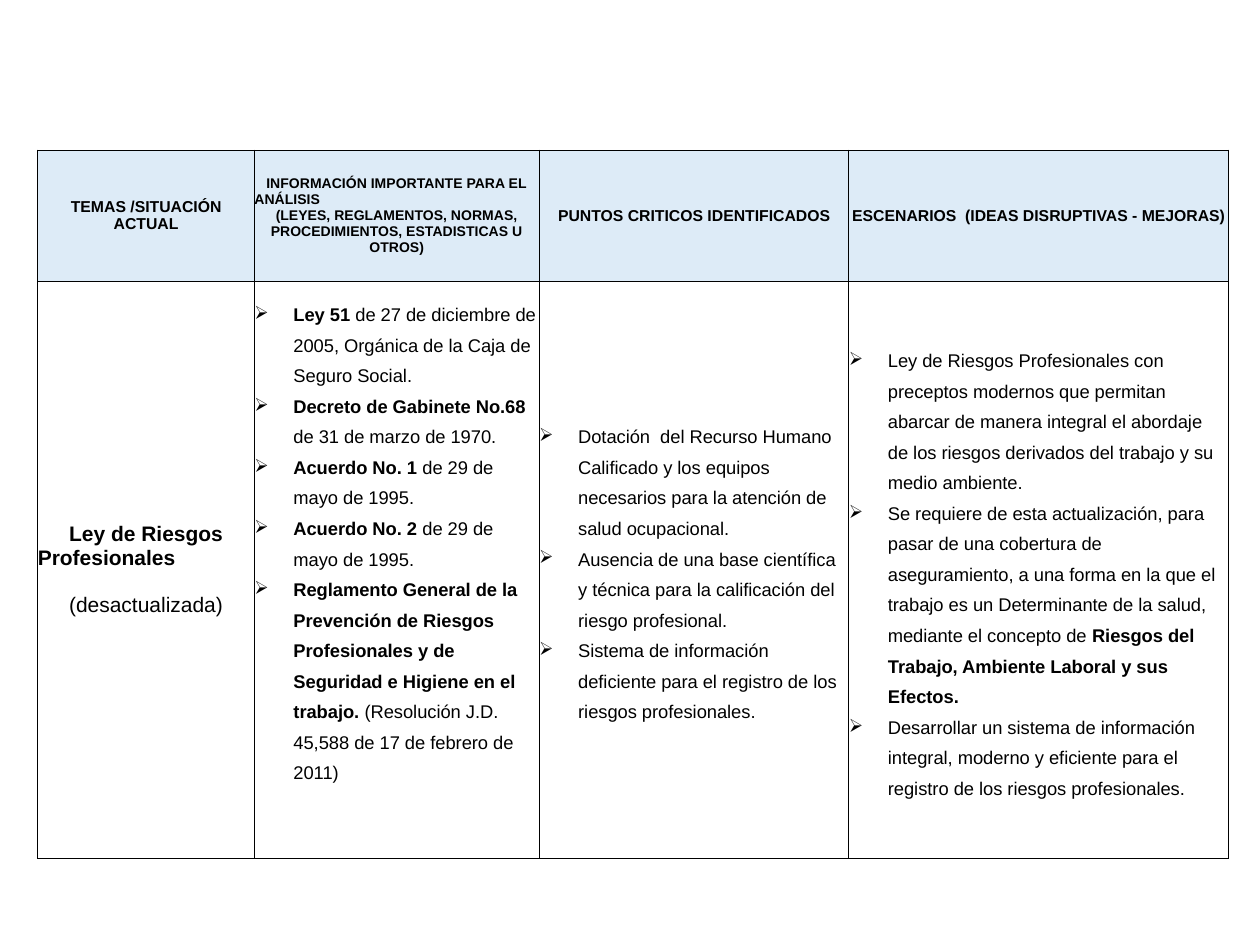
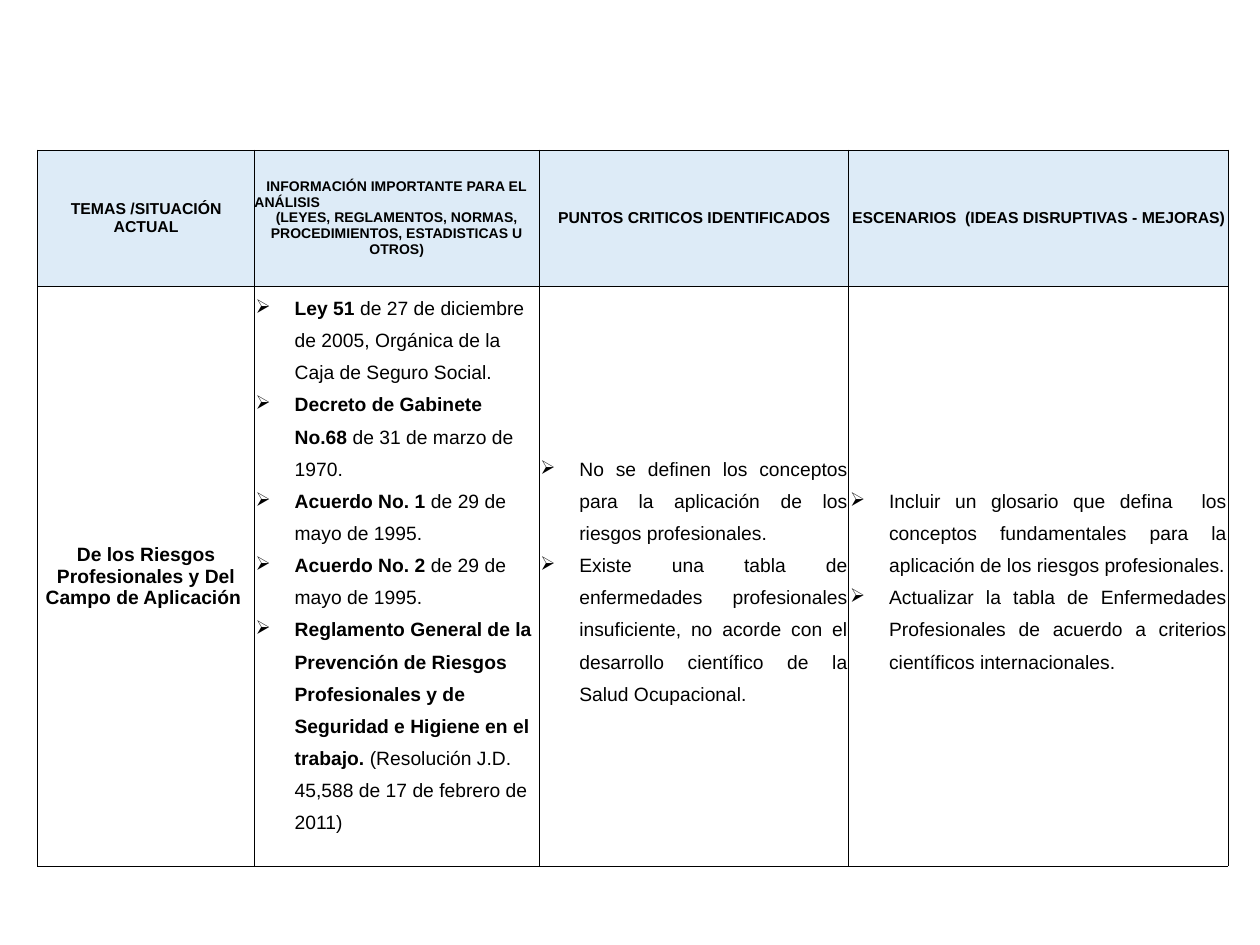
from lxml import etree
from pptx import Presentation
from pptx.dml.color import RGBColor
from pptx.enum.text import MSO_ANCHOR, PP_ALIGN
from pptx.oxml.ns import qn
from pptx.util import Pt

LEFT, CENTER, JUSTIFY = PP_ALIGN.LEFT, PP_ALIGN.CENTER, PP_ALIGN.JUSTIFY
MIDDLE = MSO_ANCHOR.MIDDLE

COLORS = {"text": "000000", "border": "000000", "header": "DDEBF7"}
FONT = "Arial"
COL_WIDTHS = [123.8, 162.7, 177, 216.7]
INDENT = 22.3

# Header cells: size and (text, alignment) lines
HEADERS = [
    (9, [("*TEMAS /SITUACIÓN ACTUAL*", CENTER)]),
    (8, [("*INFORMACIÓN IMPORTANTE PARA EL*", CENTER),
         ("*ANÁLISIS*", LEFT),
         ("*(LEYES, REGLAMENTOS, NORMAS, PROCEDIMIENTOS, ESTADISTICAS U OTROS)*", CENTER)]),
    (9, [("*PUNTOS CRITICOS IDENTIFICADOS*", CENTER)]),
    (9, [("*ESCENARIOS  (IDEAS DISRUPTIVAS - MEJORAS)*", CENTER)]),
]

# Asterisks enclose bold text
LAWS = [
    "*Ley 51 *de 27 de diciembre de 2005, Orgánica de la Caja de Seguro Social.",
    "*Decreto de Gabinete No.68* de 31 de marzo de 1970.",
    "*Acuerdo No. 1 *de 29 de mayo de 1995.",
    "*Acuerdo No. 2* de 29 de mayo de 1995.",
    "*Reglamento General de la Prevención de Riesgos Profesionales y de Seguridad "
    "e Higiene en el trabajo. *(Resolución J.D. 45,588 de 17 de febrero de 2011)",
]


class Deck:
    def __init__(self):
        self.prs = Presentation()
        self.prs.slide_width, self.prs.slide_height = Pt(720), Pt(540)
        self.s = None

    def slide(self):
        self.s = self.prs.slides.add_slide(self.prs.slide_layouts[6])

    def table(self, heights, inset=0):
        """Add the four-column table with its header row."""
        frame = self.s.shapes.add_table(2, 4, Pt(21.6), Pt(85.7),
                                        Pt(sum(COL_WIDTHS)), Pt(sum(heights)))
        table = frame.table
        table.first_row = table.horz_banding = False
        for col, width in zip(table.columns, COL_WIDTHS):
            col.width = Pt(width)
        for row, height in zip(table.rows, heights):
            row.height = Pt(height)
        for r, row in enumerate(table.rows):
            for cell in row.cells:
                self.style_cell(cell, r == 0, 0 if r == 0 else inset)
        for cell, (size, lines) in zip(table.rows[0].cells, HEADERS):
            self.lines(cell, lines, size)
        return table.rows[1].cells

    def style_cell(self, cell, header, inset):
        cell.vertical_anchor = MIDDLE
        cell.margin_left = cell.margin_right = cell.margin_top = Pt(inset)
        cell.margin_bottom = 0
        tc_pr = cell._tc.get_or_add_tcPr()
        for side in ("a:lnL", "a:lnR", "a:lnT", "a:lnB"):
            ln = etree.SubElement(tc_pr, qn(side), w=str(Pt(0.5)))
            fill = etree.SubElement(ln, qn("a:solidFill"))
            etree.SubElement(fill, qn("a:srgbClr"), val=COLORS["border"])
        if header:
            cell.fill.solid()
            cell.fill.fore_color.rgb = RGBColor.from_string(COLORS["header"])
        else:
            cell.fill.background()

    def lines(self, cell, lines, size):
        """Write one paragraph per (text, alignment) pair."""
        tf = cell.text_frame
        for i, (text, align) in enumerate(lines):
            p = tf.add_paragraph() if i else tf.paragraphs[0]
            p.alignment = align
            for k, part in enumerate(text.split("*")):
                if part:
                    r = p.add_run()
                    r.text = part
                    r.font.name, r.font.size, r.font.bold = FONT, Pt(size), k % 2 == 1
                    r.font.color.rgb = RGBColor.from_string(COLORS["text"])
        return tf.paragraphs

    def bullets(self, cell, items, size, align=LEFT):
        for p in self.lines(cell, [(item, align) for item in items], size):
            p.line_spacing = 1.5
            p_pr = p._p.get_or_add_pPr()
            p_pr.set("marL", str(Pt(INDENT)))
            p_pr.set("indent", str(-Pt(INDENT)))
            etree.SubElement(p_pr, qn("a:buChar"), char="➢")


def main():
    deck = Deck()

    # Slide 1: outdated law
    deck.slide()
    topic, laws, issues, scenarios = deck.table([75, 330])
    paragraphs = deck.lines(topic, [("*Ley de Riesgos*", CENTER), ("*Profesionales*", LEFT),
                                    ("(desactualizada)", CENTER)], 12)
    paragraphs[2].space_before = Pt(13.5)
    deck.bullets(laws, LAWS, 10.5)
    laws.margin_bottom = Pt(35)
    deck.bullets(issues, [
        "Dotación  del Recurso Humano Calificado y los equipos necesarios para la "
        "atención de salud ocupacional.",
        "Ausencia de una base científica y técnica para la calificación del riesgo profesional.",
        "Sistema de información deficiente para el registro de los riesgos profesionales.",
    ], 10.5)
    deck.bullets(scenarios, [
        "Ley de Riesgos Profesionales con preceptos modernos que permitan abarcar de manera "
        "integral el abordaje de los riesgos derivados del trabajo y su medio ambiente.",
        "Se requiere de esta actualización, para pasar de una cobertura de aseguramiento, a una "
        "forma en la que el trabajo es un Determinante de la salud, mediante el concepto de "
        "*Riesgos del Trabajo, Ambiente Laboral y sus Efectos.*",
        "Desarrollar un sistema de información integral, moderno y eficiente para el registro "
        "de los riesgos profesionales.",
    ], 10.5)

    # Slide 2: scope of application
    deck.slide()
    topic, laws, issues, scenarios = deck.table([77.8, 331], inset=0.7)
    deck.lines(topic, [("*De los Riesgos Profesionales y Del Campo de Aplicación *", CENTER)], 11)
    deck.bullets(laws, LAWS, 11)
    laws.margin_bottom = Pt(18.4)
    deck.bullets(issues, [
        "No se definen los conceptos para la aplicación de los riesgos profesionales.",
        "Existe una tabla de enfermedades profesionales insuficiente, no acorde con el "
        "desarrollo científico de la Salud Ocupacional.",
    ], 11, JUSTIFY)
    deck.bullets(scenarios, [
        "Incluir un glosario que defina  los conceptos fundamentales para la aplicación de "
        "los riesgos profesionales.",
        "Actualizar la tabla de Enfermedades Profesionales de acuerdo a criterios "
        "científicos internacionales.",
    ], 11, JUSTIFY)

    deck.prs.save("out.pptx")


if __name__ == "__main__":
    main()
